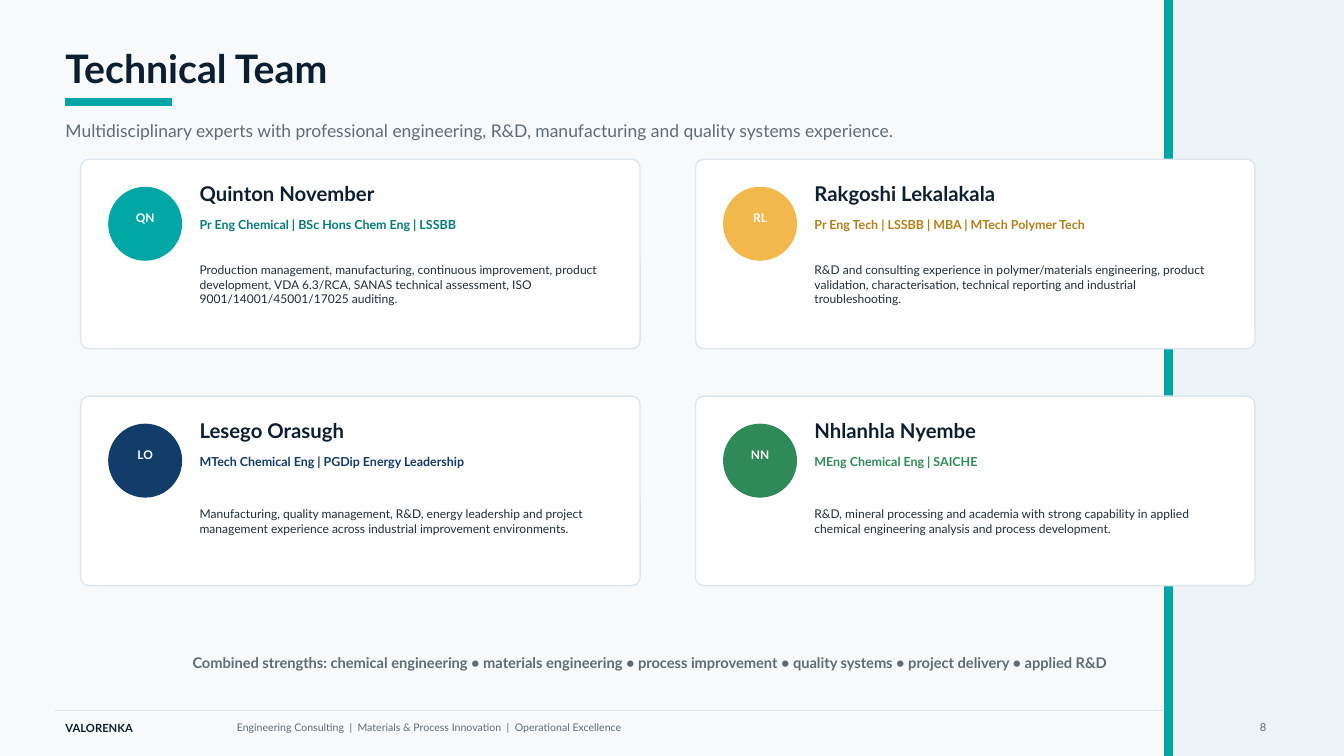
"""Build the Technical Team slide with four profile cards."""
from lxml import etree
from pptx import Presentation
from pptx.dml.color import RGBColor
from pptx.enum.shapes import MSO_CONNECTOR, MSO_SHAPE
from pptx.enum.text import MSO_ANCHOR, PP_ALIGN
from pptx.oxml.ns import qn
from pptx.util import Pt

RECT, ROUND, OVAL = MSO_SHAPE.RECTANGLE, MSO_SHAPE.ROUNDED_RECTANGLE, MSO_SHAPE.OVAL
STRAIGHT = MSO_CONNECTOR.STRAIGHT
LEFT, CENTER = PP_ALIGN.LEFT, PP_ALIGN.CENTER
MIDDLE, TOP = MSO_ANCHOR.MIDDLE, MSO_ANCHOR.TOP

COLORS = {
    "paper": "F7F9FB", "panel": "EEF3F8", "white": "FFFFFF", "border": "DCE6EE",
    "rule": "D9E3EC", "ink": "0B1F33", "body": "1F2D3A", "muted": "5E6C78",
    "teal": "00A7A5", "deep_teal": "007C7A", "gold": "F2B84B",
    "deep_gold": "B47F15", "navy": "123C69", "green": "2E8B57",
}
STYLES = {
    "title": {"size": 28, "color": "ink", "bold": True},
    "subtitle": {"size": 12.5, "color": "muted"},
    "initials": {"size": 8.5, "color": "white", "bold": True},
    "name": {"size": 14.5, "color": "ink", "bold": True},
    "role": {"size": 8.9, "bold": True},
    "bio": {"size": 8.6, "color": "body"},
    "strengths": {"size": 10.5, "color": "muted", "bold": True},
    "brand": {"size": 8, "color": "ink", "bold": True},
    "tagline": {"size": 7.5, "color": "muted"},
    "number": {"size": 8, "color": "muted"},
}
CARD_X, CARD_Y, CARD_W, CARD_H = 57.6, 113.76, 399.6, 135.36
STEP_X, STEP_Y = 439.2, 169.2
TEAM = [
    ("QN", "Quinton November", "Pr Eng Chemical | BSc Hons Chem Eng | LSSBB",
     "Production management, manufacturing, continuous improvement, product development, "
     "VDA 6.3/RCA, SANAS technical assessment, ISO 9001/14001/45001/17025 auditing.",
     "teal", "deep_teal"),
    ("RL", "Rakgoshi Lekalakala", "Pr Eng Tech | LSSBB | MBA | MTech Polymer Tech",
     "R&D and consulting experience in polymer/materials engineering, product validation, "
     "characterisation, technical reporting and industrial troubleshooting.",
     "gold", "deep_gold"),
    ("LO", "Lesego Orasugh", "MTech Chemical Eng | PGDip Energy Leadership",
     "Manufacturing, quality management, R&D, energy leadership and project management "
     "experience across industrial improvement environments.",
     "navy", "navy"),
    ("NN", "Nhlanhla Nyembe", "MEng Chemical Eng | SAICHE",
     "R&D, mineral processing and academia with strong capability in applied chemical "
     "engineering analysis and process development.",
     "green", "green"),
]


def rgb(name):
    """Return the named colour."""
    return RGBColor.from_string(COLORS[name])


def add_block(s, kind, box, fill, line=None):
    """Add a filled shape with an optional one-point outline."""
    sp = s.shapes.add_shape(kind, *map(Pt, box))
    sp.shadow.inherit = False
    sp.fill.solid()
    sp.fill.fore_color.rgb = rgb(fill)
    if line:
        sp.line.color.rgb = rgb(line)
        sp.line.width = Pt(1)
    else:
        sp.line.fill.background()
    return sp


def add_text(s, box, text, style, align=LEFT, anchor=MIDDLE, inset=(0, 0), **extra):
    """Add a wrapped text box in one of the named styles."""
    tf = s.shapes.add_textbox(*map(Pt, box)).text_frame
    across, down = map(Pt, inset)
    frame = {"word_wrap": True, "vertical_anchor": anchor, "margin_left": across,
             "margin_right": across, "margin_top": down, "margin_bottom": down}
    for key, value in frame.items():
        setattr(tf, key, value)
    p = tf.paragraphs[0]
    p.alignment = align
    r = p.add_run()
    r.text = text
    look = {**STYLES[style], **extra}
    font = {"name": "Lato", "size": Pt(look["size"]), "bold": look.get("bold", False)}
    for key, value in font.items():
        setattr(r.font, key, value)
    r.font.color.rgb = rgb(look["color"])


def add_rule(s, x1, x2, y):
    """Add a thin horizontal line."""
    line = s.shapes.add_connector(STRAIGHT, Pt(x1), Pt(y), Pt(x2), Pt(y))
    line.line.color.rgb = rgb("rule")
    line.line.width = Pt(1)
    etree.SubElement(line._element.spPr, qn("a:effectLst"))


def add_card(s, x, y, member):
    """Add one team member's card."""
    initials, name, role, bio, accent, role_color = member
    card = add_block(s, ROUND, (x, y, CARD_W, CARD_H), "white", "border")
    card.adjustments[0] = 0.043
    add_block(s, OVAL, (x + 20.16, y + 20.16, 51.84, 51.84), accent, accent)
    add_text(s, (x + 30.96, y + 37.44, 30.24, 8.64), initials, "initials", CENTER)
    text_x = x + 84.96
    add_text(s, (text_x, y + 15.84, 284.4, 16.56), name, "name")
    add_text(s, (text_x, y + 39.6, 291.6, 14.4), role, "role", color=role_color)
    add_text(s, (text_x, y + 63.36, 291.6, 51.84), bio, "bio")


def add_footer(s):
    """Add the footer rule, brand and tagline."""
    add_rule(s, 39.6, 921.6, 507.6)
    add_text(s, (46.8, 513.36, 144, 12.96), "VALORENKA", "brand")
    add_text(s, (169.2, 513.36, 532.8, 12.96),
             "Engineering Consulting  |  Materials & Process Innovation  |  "
             "Operational Excellence", "tagline")


def main():
    """Build and save the slide."""
    prs = Presentation()
    prs.slide_width, prs.slide_height = Pt(960), Pt(540)
    s = prs.slides.add_slide(prs.slide_layouts[6])
    s.background.fill.solid()
    s.background.fill.fore_color.rgb = rgb("paper")
    add_footer(s)
    add_block(s, RECT, (835.2, 0, 124.8, 540), "panel")
    add_block(s, RECT, (831.6, 0, 5.76, 540), "teal", "teal")
    add_text(s, (46.8, 32.4, 619.2, 32.4), "Technical Team", "title")
    add_block(s, RECT, (46.8, 70.56, 75.6, 5.04), "teal", "teal")
    add_text(s, (46.8, 81.36, 662.4, 23.04),
             "Multidisciplinary experts with professional engineering, R&D, "
             "manufacturing and quality systems experience.", "subtitle")
    for i, member in enumerate(TEAM):
        row, col = divmod(i, 2)
        add_card(s, CARD_X + col * STEP_X, CARD_Y + row * STEP_Y, member)
    add_text(s, (75.6, 464.4, 777.6, 18),
             "Combined strengths: chemical engineering • materials engineering • "
             "process improvement • quality systems • project delivery • applied R&D",
             "strengths", CENTER)
    add_text(s, (892.8, 511.2, 62.64, 23.76), "8", "number", anchor=TOP, inset=(7.2, 3.6))
    prs.save("out.pptx")


if __name__ == "__main__":
    main()
